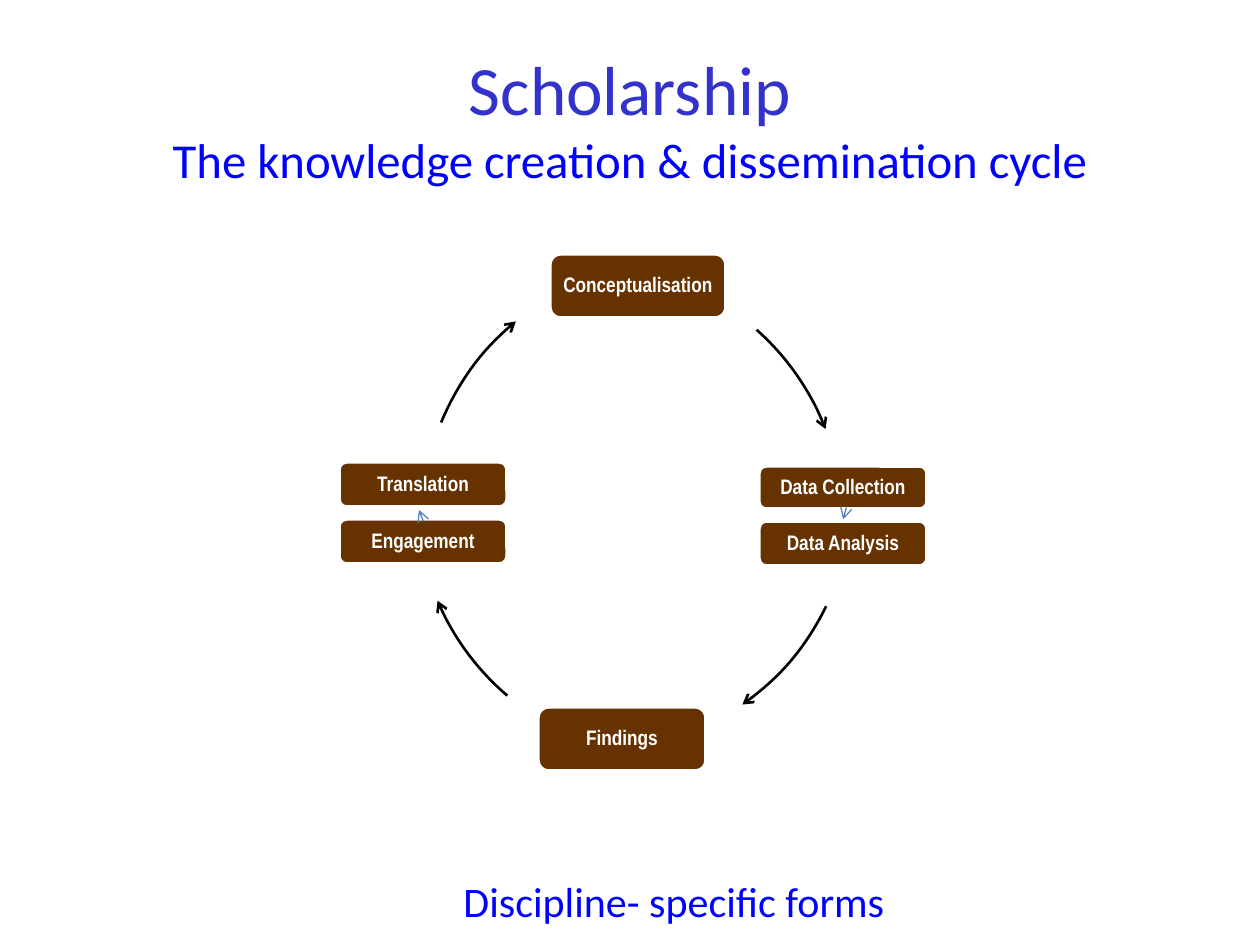
from lxml.etree import SubElement
from pptx import Presentation
from pptx.dml.color import RGBColor
from pptx.enum.shapes import MSO_SHAPE
from pptx.enum.text import MSO_ANCHOR, PP_ALIGN
from pptx.oxml.ns import qn
from pptx.util import Emu, Pt

COLORS = {
    "title": "3333CC",
    "accent": "0000FF",
    "step": "663300",
    "white": "FFFFFF",
    "main": "000000",
    "minor": "4F81BD",
}
ARC_SIZE = 514
ARROW_WIDTHS = {"main": 1.5, "minor": 0.75}
STEPS = [
    ("Conceptualisation", (211, 1, 176, 64)),
    ("Data Collection", (420, 213, 168, 43)),
    ("Data Analysis", (420, 268, 168, 45)),
    ("Findings", (199, 454, 168, 64)),
    ("Engagement", (0, 266, 168, 45)),
    ("Translation", (0, 209, 168, 45)),
]
ARROWS = [
    (-10, 12, 311.6, 338.8, "main"),
    (0, -61, 14.2, 15.9, "minor"),
    (-1, -16, 25.9, 55, "main"),
    (78, -10, 130.4, 156.9, "main"),
    (65, -87, 158.7, 160.2, "minor"),
    (83, 10, 202.3, 230.6, "main"),
]


def px(length):
    """Turn px at 126 to the inch into EMU."""
    return Emu(round(length * 914400 / 126))


def rgb(role):
    """Look up the colour of a role."""
    return RGBColor.from_string(COLORS[role])


def add_run(paragraph, wording, size, role, font="Calibri", bold=False):
    """Append one styled run."""
    run = paragraph.add_run()
    run.text = wording
    run.font.size = Pt(size)
    run.font.name = font
    run.font.bold = bold
    run.font.color.rgb = rgb(role)


def add_heading(slide, box, lines, anchor):
    """Place centred lines, each with its own size and colour, in one paragraph."""
    heading = slide.shapes.add_textbox(*map(px, box))
    frame = heading.text_frame
    frame.word_wrap = True
    frame.vertical_anchor = anchor
    paragraph = frame.paragraphs[0]
    paragraph.alignment = PP_ALIGN.CENTER
    for index, (wording, size, role) in enumerate(lines):
        if index:
            paragraph.add_line_break()
        add_run(paragraph, wording, size, role)


def add_step(slide, box, wording):
    """Place one rounded step of the cycle."""
    step = slide.shapes.add_shape(MSO_SHAPE.ROUNDED_RECTANGLE, *map(px, box))
    step.shadow.inherit = False
    step.fill.solid()
    step.fill.fore_color.rgb = rgb("step")
    step.line.color.rgb = rgb("white")
    step.line.width = Pt(2)
    frame = step.text_frame
    frame.word_wrap = True
    frame.vertical_anchor = MSO_ANCHOR.MIDDLE
    frame.margin_left = frame.margin_right = px(6)
    frame.margin_top = frame.margin_bottom = px(6)
    paragraph = frame.paragraphs[0]
    paragraph.alignment = PP_ALIGN.CENTER
    paragraph.line_spacing = 0.9
    add_run(paragraph, wording, 12, "white", "Arial Narrow", True)


def add_arc_arrow(slide, left, top, start, end, role):
    """Draw a clockwise arc between two angles in degrees, with an open arrowhead."""
    arrow = slide.shapes.add_shape(
        MSO_SHAPE.ARC, px(left), px(top), px(ARC_SIZE), px(ARC_SIZE)
    )
    arrow.shadow.inherit = False
    arrow.fill.background()
    for index, angle in enumerate((start, end)):
        arrow.adjustments[index] = angle * 0.6
    arrow.line.color.rgb = rgb(role)
    arrow.line.width = Pt(ARROW_WIDTHS[role])
    outline = arrow.line._get_or_add_ln()
    SubElement(outline, qn("a:tailEnd"), type="arrow")


def add_cycle(slide, left, top):
    """Place the steps, each followed by the arrow to the next one."""
    for (wording, (x, y, width, height)), (arc_x, arc_y, *arc) in zip(STEPS, ARROWS):
        add_step(slide, (left + x, top + y, width, height), wording)
        add_arc_arrow(slide, left + arc_x, top + arc_y, *arc)


def main():
    """Build and save the slide."""
    deck = Presentation()
    deck.slide_width, deck.slide_height = px(1260), px(945)
    slide = deck.slides.add_slide(deck.slide_layouts[6])
    title = [
        ("Scholarship", 39.6, "title"),
        ("The knowledge creation & dissemination cycle", 27.9, "accent"),
    ]
    add_heading(slide, (63, 38, 1134, 158), title, MSO_ANCHOR.MIDDLE)
    add_cycle(slide, 339, 253)
    footer = [("Discipline- specific forms", 24, "accent")]
    add_heading(slide, (441, 869, 466, 63), footer, MSO_ANCHOR.TOP)
    deck.save("out.pptx")


if __name__ == "__main__":
    main()
